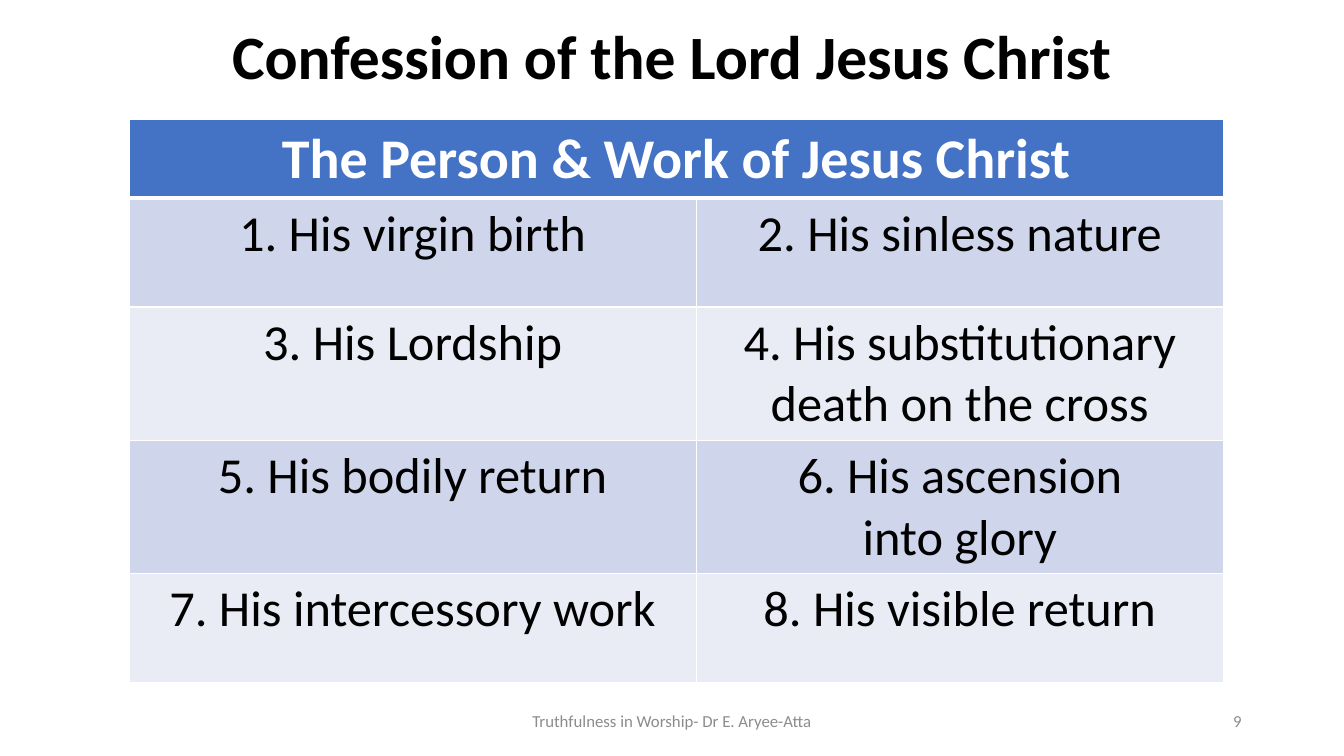
from dataclasses import dataclass

from lxml import etree
from pptx import Presentation
from pptx.dml.color import RGBColor
from pptx.enum.text import MSO_ANCHOR, PP_ALIGN
from pptx.oxml.ns import qn
from pptx.slide import Slide
from pptx.table import _Cell
from pptx.text.text import TextFrame
from pptx.util import Cm, Pt

CENTER = PP_ALIGN.CENTER
RIGHT = PP_ALIGN.RIGHT
MIDDLE = MSO_ANCHOR.MIDDLE


@dataclass(frozen=True)
class Theme:
    font: str = "Calibri"
    black: str = "000000"
    white: str = "FFFFFF"
    gray: str = "8C8C8C"
    header: str = "4472C4"
    bands: tuple[str, str] = ("CFD5EA", "E9EBF5")
    title_size: int = 44
    header_size: int = 40
    body_size: int = 36
    footer_size: int = 12
    thin: int = 1
    thick: int = 3


THEME = Theme()


@dataclass(frozen=True)
class Label:
    text: str
    left: float
    top: float
    width: float
    height: float
    size: int
    color: str
    bold: bool = False
    align: PP_ALIGN = CENTER
    line_spacing: float = 1.0


LABELS = [
    Label("Confession of the Lord Jesus Christ", 2.34, 0, 29.21, 3.02,
          THEME.title_size, THEME.black, bold=True, line_spacing=0.9),
    Label("Truthfulness in Worship- Dr E. Aryee-Atta", 11.22, 17.65, 11.43, 1.01,
          THEME.footer_size, THEME.gray),
    Label("9", 23.92, 17.65, 7.62, 1.01, THEME.footer_size, THEME.gray, align=RIGHT),
]

HEADING = "The Person & Work of Jesus Christ"
CONFESSIONS = [
    ("1. His virgin birth", "2. His sinless nature"),
    ("3. His Lordship", "4. His substitutionary death on the cross"),
    ("5. His bodily return", "6. His ascension\ninto glory"),
    ("7. His intercessory work", "8. His visible return"),
]
TABLE_LEFT, TABLE_TOP = 3.25, 3.02
COLUMN_WIDTHS = [14.3, 13.28]
ROW_HEIGHTS = [1.9, 2.74, 3.3, 3.23, 2.74]


def write_text(frame: TextFrame, text: str, *, size: int, color: str, bold: bool = False,
               align: PP_ALIGN = CENTER, line_spacing: float = 1.0) -> None:
    frame.word_wrap = True
    for index, line in enumerate(text.split("\n")):
        para = frame.add_paragraph() if index else frame.paragraphs[0]
        para.alignment = align
        para.line_spacing = line_spacing
        span = para.add_run()
        span.text = line
        span.font.name = THEME.font
        span.font.size = Pt(size)
        span.font.bold = bold
        span.font.color.rgb = RGBColor.from_string(color)


def add_label(page: Slide, label: Label) -> None:
    box = page.shapes.add_textbox(
        Cm(label.left), Cm(label.top), Cm(label.width), Cm(label.height))
    box.text_frame.vertical_anchor = MIDDLE
    write_text(box.text_frame, label.text, size=label.size, color=label.color,
               bold=label.bold, align=label.align, line_spacing=label.line_spacing)


def style_cell(cell: _Cell, fill: str, top: int, bottom: int) -> None:
    properties = cell._tc.get_or_add_tcPr()
    borders = {"a:lnL": THEME.thin, "a:lnR": THEME.thin, "a:lnT": top, "a:lnB": bottom}
    for tag, width in borders.items():
        line = etree.SubElement(properties, qn(tag), w=str(Pt(width)))
        solid = etree.SubElement(line, qn("a:solidFill"))
        etree.SubElement(solid, qn("a:srgbClr"), val=THEME.white)
    cell.fill.solid()
    cell.fill.fore_color.rgb = RGBColor.from_string(fill)


def add_confession_table(page: Slide) -> None:
    table = page.shapes.add_table(
        len(ROW_HEIGHTS), len(COLUMN_WIDTHS), Cm(TABLE_LEFT), Cm(TABLE_TOP),
        Cm(sum(COLUMN_WIDTHS)), Cm(sum(ROW_HEIGHTS))).table
    for column, width in zip(table.columns, COLUMN_WIDTHS):
        column.width = Cm(width)
    for row, height in zip(table.rows, ROW_HEIGHTS):
        row.height = Cm(height)

    for cell in table.rows[0].cells:
        style_cell(cell, THEME.header, THEME.thin, THEME.thick)
    heading = table.cell(0, 0)
    heading.merge(table.cell(0, len(COLUMN_WIDTHS) - 1))
    write_text(heading.text_frame, HEADING, size=THEME.header_size,
               color=THEME.white, bold=True)

    for row_index, confessions in enumerate(CONFESSIONS):
        fill = THEME.bands[row_index % len(THEME.bands)]
        top = THEME.thin if row_index else THEME.thick
        for column_index, text in enumerate(confessions):
            cell = table.cell(row_index + 1, column_index)
            style_cell(cell, fill, top, THEME.thin)
            write_text(cell.text_frame, text, size=THEME.body_size, color=THEME.black)


def main() -> None:
    deck = Presentation()
    deck.slide_width, deck.slide_height = Cm(33.87), Cm(19.05)
    page = deck.slides.add_slide(deck.slide_layouts[6])
    add_confession_table(page)
    for label in LABELS:
        add_label(page, label)
    deck.save("out.pptx")


if __name__ == "__main__":
    main()
